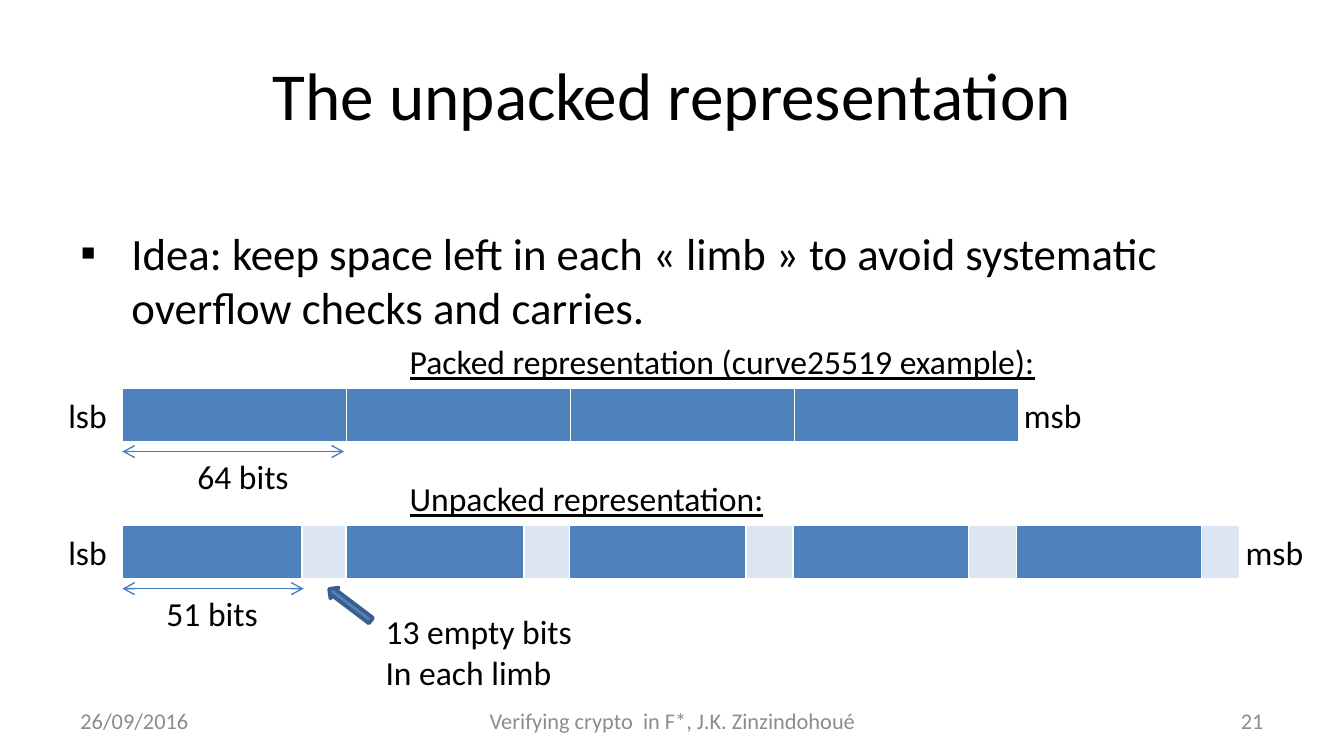
from lxml.etree import SubElement
from pptx import Presentation
from pptx.dml.color import RGBColor
from pptx.enum.shapes import MSO_CONNECTOR, MSO_SHAPE
from pptx.enum.text import MSO_ANCHOR, MSO_AUTO_SIZE, PP_ALIGN
from pptx.oxml import parse_xml
from pptx.oxml.ns import nsdecls, qn
from pptx.util import Inches, Pt

W = 10
H = W * 9 / 16
BLACK, GREY, WHITE = "000000", "8C8C8C", "FFFFFF"
BLUE, PALE, ARROW_BLUE, EDGE = "4F81BD", "DCE6F2", "4B7EBC", "3A5F8C"
LEFT, CENTER, RIGHT = PP_ALIGN.LEFT, PP_ALIGN.CENTER, PP_ALIGN.RIGHT

TITLE = "The unpacked representation"
IDEA = "Idea: keep space left in each « limb » to avoid systematic overflow checks and carries."
FOOTER = [  # text, left, width, alignment
    ("26/09/2016", 0.5, 2.33, LEFT),
    ("Verifying crypto  in F*, J.K. Zinzindohoué", 3.42, 3.17, CENTER),
    ("21", 7.17, 2.33, RIGHT),
]
BARS = [  # parts are the relative widths of the cells
    dict(heading="Packed representation (curve25519 example):", heading_w=6.22,
         top=2.89, width=6.67, parts=[1] * 4, fills=[BLUE],
         size="64 bits", size_x=1.37, span=1.65),
    dict(heading="Unpacked representation:", heading_w=3.15,
         top=3.91, width=8.32, fills=[BLUE, PALE],
         parts=[1.34, 0.33, 1.33, 0.34, 1.32, 0.35, 1.31, 0.36, 1.38, 0.29],
         size="51 bits", size_x=1.14, span=1.35),
]
BAR_X, BAR_H, LABEL_H, MARGIN = 0.91, 0.41, 0.4, 0.5


def rgb(color):
    return RGBColor.from_string(color)


def text(content, x, y, w, h, size=18, color=BLACK, align=LEFT,
         anchor=MSO_ANCHOR.TOP, wrap=True, underline=False):
    """Add a text box with one paragraph per line of content."""
    tf = s.shapes.add_textbox(Inches(x), Inches(y), Inches(w), Inches(h)).text_frame
    tf.word_wrap = wrap
    tf.auto_size = MSO_AUTO_SIZE.NONE
    tf.vertical_anchor = anchor
    for i, line in enumerate(content.split("\n")):
        p = tf.paragraphs[0] if i == 0 else tf.add_paragraph()
        p.alignment = align
        r = p.add_run()
        r.text = line
        r.font.name, r.font.size = "Calibri", Pt(size)
        r.font.color.rgb = rgb(color)
        if underline:
            r.font.underline = True
    return tf


def bullet(p, char, indent):
    pPr = p._p.get_or_add_pPr()
    pPr.set("marL", str(Inches(indent)))
    pPr.set("indent", str(-Inches(indent)))
    SubElement(pPr, qn("a:buFont")).set("typeface", "Arial")
    SubElement(pPr, qn("a:buChar")).set("char", char)


def set_borders(cell):
    tcPr = cell._tc.get_or_add_tcPr()
    for i, (side, width) in enumerate([("L", 1), ("R", 1), ("T", 1), ("B", 3)]):
        tcPr.insert(i, parse_xml(
            f'<a:ln{side} {nsdecls("a")} w="{Pt(width)}"><a:solidFill>'
            f'<a:srgbClr val="{WHITE}"/></a:solidFill></a:ln{side}>'))


def limb_table(top, width, parts, fills):
    table = s.shapes.add_table(1, len(parts), Inches(BAR_X), Inches(top),
                               Inches(width), Inches(BAR_H)).table
    for i, part in enumerate(parts):
        table.columns[i].width = Inches(width * part / sum(parts))
        cell = table.cell(0, i)
        cell.fill.solid()
        cell.fill.fore_color.rgb = rgb(fills[i % len(fills)])
        set_borders(cell)


def double_arrow(x, y, length):
    line = s.shapes.add_connector(MSO_CONNECTOR.STRAIGHT, Inches(x), Inches(y),
                                  Inches(x + length), Inches(y))
    line.line.color.rgb = rgb(ARROW_BLUE)
    line.line.width = Pt(0.75)
    ln = line.line._get_or_add_ln()
    for end in ("a:headEnd", "a:tailEnd"):
        SubElement(ln, qn(end)).set("type", "arrow")
    SubElement(line._element.spPr, qn("a:effectLst"))


def bar(heading, heading_w, top, width, parts, fills, size, size_x, span):
    """Add a row of limbs with its heading, end labels and size arrow."""
    limb_table(top, width, parts, fills)
    text(heading, 2.95, top - LABEL_H, heading_w, LABEL_H, underline=True)
    text("lsb", BAR_X - 0.5, top, 0.49, LABEL_H, wrap=False)
    text("msb", BAR_X + width - 0.06, top, 0.63, LABEL_H, wrap=False)
    double_arrow(BAR_X, top + 0.47, span)
    text(size, size_x, top + 0.45, 0.89, LABEL_H, wrap=False)


prs = Presentation()
prs.slide_width, prs.slide_height = Inches(W), Inches(H)
s = prs.slides.add_slide(prs.slide_layouts[6])

text(TITLE, MARGIN, 0.23, W - 2 * MARGIN, 0.94, size=36, align=CENTER,
     anchor=MSO_ANCHOR.MIDDLE)
idea = text(IDEA, MARGIN, 1.63, W - 2 * MARGIN, 3.39, size=24).paragraphs[0]
idea.space_before = Pt(4.8)
bullet(idea, "▪", 0.38)

for content, x, w, align in FOOTER:
    text(content, x, 5.21, w, 0.3, size=12, color=GREY, align=align,
         anchor=MSO_ANCHOR.MIDDLE)

for b in BARS:
    bar(**b)

pointer = s.shapes.add_shape(MSO_SHAPE.RIGHT_ARROW, Inches(2.41), Inches(4.45),
                             Inches(0.39), Inches(0.1))
pointer.rotation = 217.1
pointer.shadow.inherit = False
pointer.fill.solid()
pointer.fill.fore_color.rgb = rgb(BLUE)
pointer.line.color.rgb = rgb(EDGE)
pointer.line.width = Pt(2)
text("13 empty bits\nIn each limb", 2.77, 4.5, 1.61, 0.71, wrap=False)

prs.save("out.pptx")
